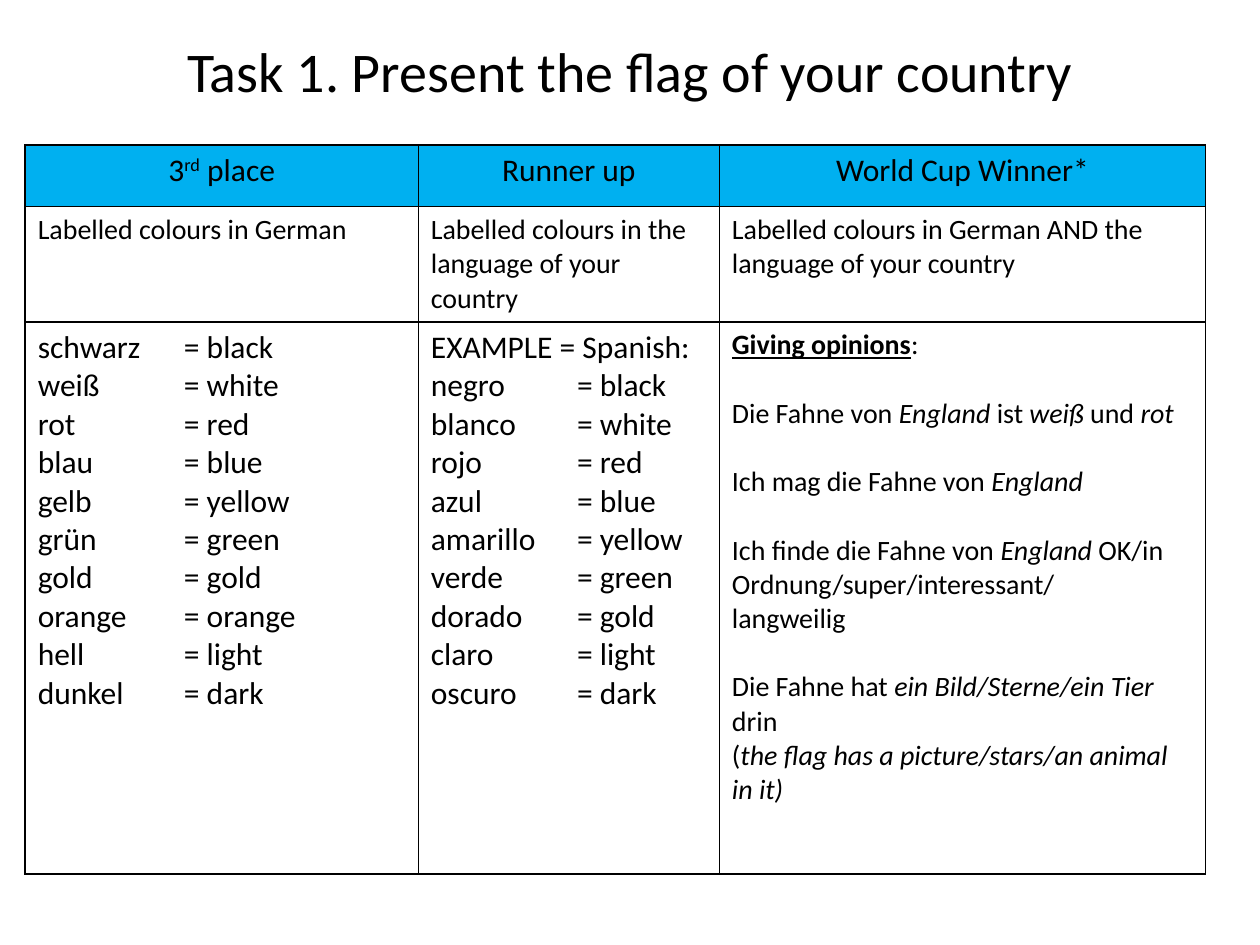
from lxml import etree
from pptx import Presentation
from pptx.dml.color import RGBColor
from pptx.enum.text import MSO_ANCHOR, PP_ALIGN
from pptx.oxml.ns import qn
from pptx.util import Inches, Pt

CENTER, LEFT, MIDDLE = PP_ALIGN.CENTER, PP_ALIGN.LEFT, MSO_ANCHOR.MIDDLE
FONT, BLACK, HEADER_BLUE = "Calibri", "000000", "00B0F0"
TAB_STOP = 1.16     # inches from the cell's text edge to the "=" column
BLANK_LINE = 19.5   # points, one line of 16 pt text

# Content: a paragraph is a list of (text, style) spans
TITLE = "Task 1. Present the flag of your country"
HEADERS = [
    [("3", ""), ("rd", "superscript"), (" place", "")],
    [("Runner up", "")],
    [("World Cup Winner*", "")],
]
TASKS = [
    "Labelled colours in German",
    "Labelled colours in the language of your country",
    "Labelled colours in German AND the language of your country",
]
ENGLISH = ["black", "white", "red", "blue", "yellow", "green", "gold",
           "orange", "light", "dark"]
GERMAN = ["schwarz", "weiß", "rot", "blau", "gelb", "grün", "gold",
          "orange", "hell", "dunkel"]
SPANISH = {"black": "negro", "white": "blanco", "red": "rojo", "blue": "azul",
           "yellow": "amarillo", "green": "verde", "gold": "dorado",
           "light": "claro", "dark": "oscuro"}
SPANISH_HEADING = "EXAMPLE = Spanish:"
# Each group is set apart from the one before by a blank line
OPINIONS = [
    [[("Giving opinions", "heading"), (":", "")]],
    [[("Die Fahne von ", ""), ("England ", "italic"), ("ist ", ""),
      ("weiß", "italic"), (" und ", ""), ("rot", "italic")]],
    [[("Ich mag die Fahne von ", ""), ("England", "italic")]],
    [[("Ich finde die Fahne von ", ""), ("England ", "italic"),
      ("OK/in Ordnung/super/interessant/", "")],
     [("langweilig", "")]],
    [[("Die Fahne hat ", ""), ("ein Bild/Sterne/ein Tier ", "italic"),
      ("drin", "")],
     [("(", ""), ("the flag has a picture/stars/an animal in it)", "italic")]],
]

COLUMNS = [3.12, 2.39, 3.86]
ROWS = [0.49, 0.91, 4.38]


def color(value):
    return RGBColor.from_string(value)


def write(para, spans, size, align=LEFT):
    para.alignment = align
    for text, style in spans:
        span = para.add_run()
        span.text = text
        font = span.font
        font.name, font.size = FONT, Pt(size)
        font.color.rgb = color(BLACK)
        if style == "italic":
            font.italic = True
        elif style == "heading":
            font.bold = font.underline = True
        elif style == "superscript":
            font._element.set("baseline", "30000")


def fill_cell(cell, paragraphs, size, align=LEFT):
    frame = cell.text_frame
    for index, spans in enumerate(paragraphs):
        para = frame.paragraphs[0] if index == 0 else frame.add_paragraph()
        write(para, spans, size, align)


def add_tab_stop(para):
    tabs = etree.SubElement(para._p.get_or_add_pPr(), qn("a:tabLst"))
    etree.SubElement(tabs, qn("a:tab"), pos=str(Inches(TAB_STOP)), algn="l")


def add_borders(cell):
    properties = cell._tc.get_or_add_tcPr()
    for index, side in enumerate(("lnL", "lnR", "lnT", "lnB")):
        line = etree.Element(qn("a:" + side), w=str(Pt(1)))
        paint = etree.SubElement(line, qn("a:solidFill"))
        etree.SubElement(paint, qn("a:srgbClr"), val=BLACK)
        properties.insert(index, line)


def word_pairs(pairs):
    return [[(f"{word}\t= {meaning}", "")] for word, meaning in pairs]


deck = Presentation()
deck.slide_width, deck.slide_height = Inches(10), Inches(7.5)
page = deck.slides.add_slide(deck.slide_layouts[5])

# Title
title = page.shapes.title
title.left, title.top = Inches(0.5), Inches(0.29)
title.width, title.height = Inches(9), Inches(0.54)
title.text_frame.vertical_anchor = MIDDLE
write(title.text_frame.paragraphs[0], [(TITLE, "")], 32, CENTER)

# Table grid
table = page.shapes.add_table(
    len(ROWS), len(COLUMNS), Inches(0.2), Inches(1.15),
    Inches(sum(COLUMNS)), Inches(sum(ROWS))).table
table.first_row = table.horz_banding = False
for column, width in zip(table.columns, COLUMNS):
    column.width = Inches(width)
for row, height in zip(table.rows, ROWS):
    row.height = Inches(height)
for cell in table.iter_cells():
    cell.fill.background()
    add_borders(cell)

# Headers and tasks
for column, (header, task) in enumerate(zip(HEADERS, TASKS)):
    head_cell = table.cell(0, column)
    head_cell.fill.solid()
    head_cell.fill.fore_color.rgb = color(HEADER_BLUE)
    fill_cell(head_cell, [header], 18, CENTER)
    fill_cell(table.cell(1, column), [[(task, "")]], 16)

# Vocabulary lists, aligned on a tab stop
german_cell, spanish_cell, opinion_cell = (table.cell(2, i) for i in range(3))
fill_cell(german_cell, word_pairs(zip(GERMAN, ENGLISH)), 18)
fill_cell(spanish_cell, [[(SPANISH_HEADING, "")]] + word_pairs(
    (word, meaning) for meaning, word in SPANISH.items()), 18)
for cell in (german_cell, spanish_cell):
    for para in cell.text_frame.paragraphs:
        if "\t" in para.text:
            add_tab_stop(para)

# Opinions
fill_cell(opinion_cell, [line for group in OPINIONS for line in group], 16)
position = 0
for group in OPINIONS:
    if position:
        opinion_cell.text_frame.paragraphs[position].space_before = Pt(BLANK_LINE)
    position += len(group)

deck.save("out.pptx")
